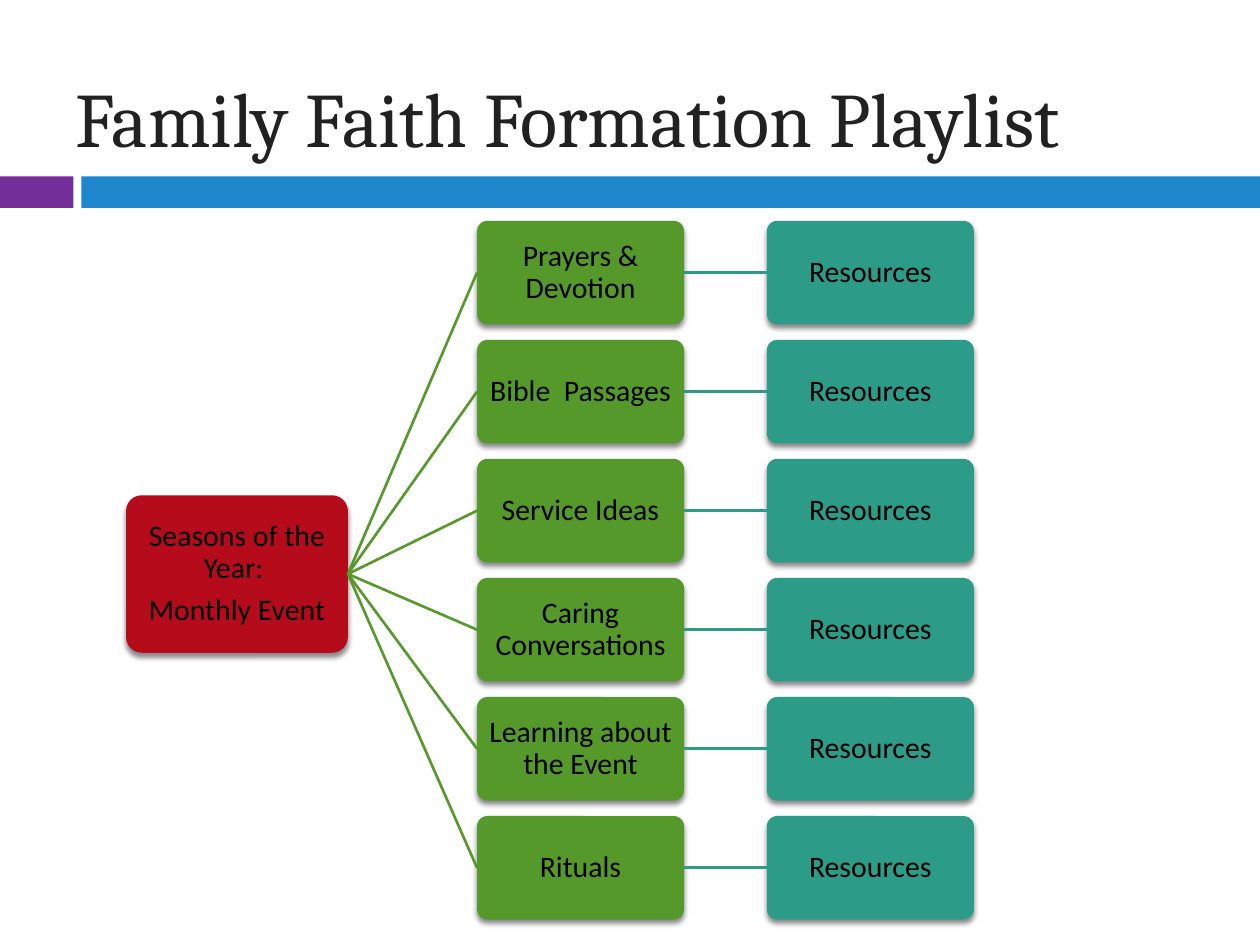
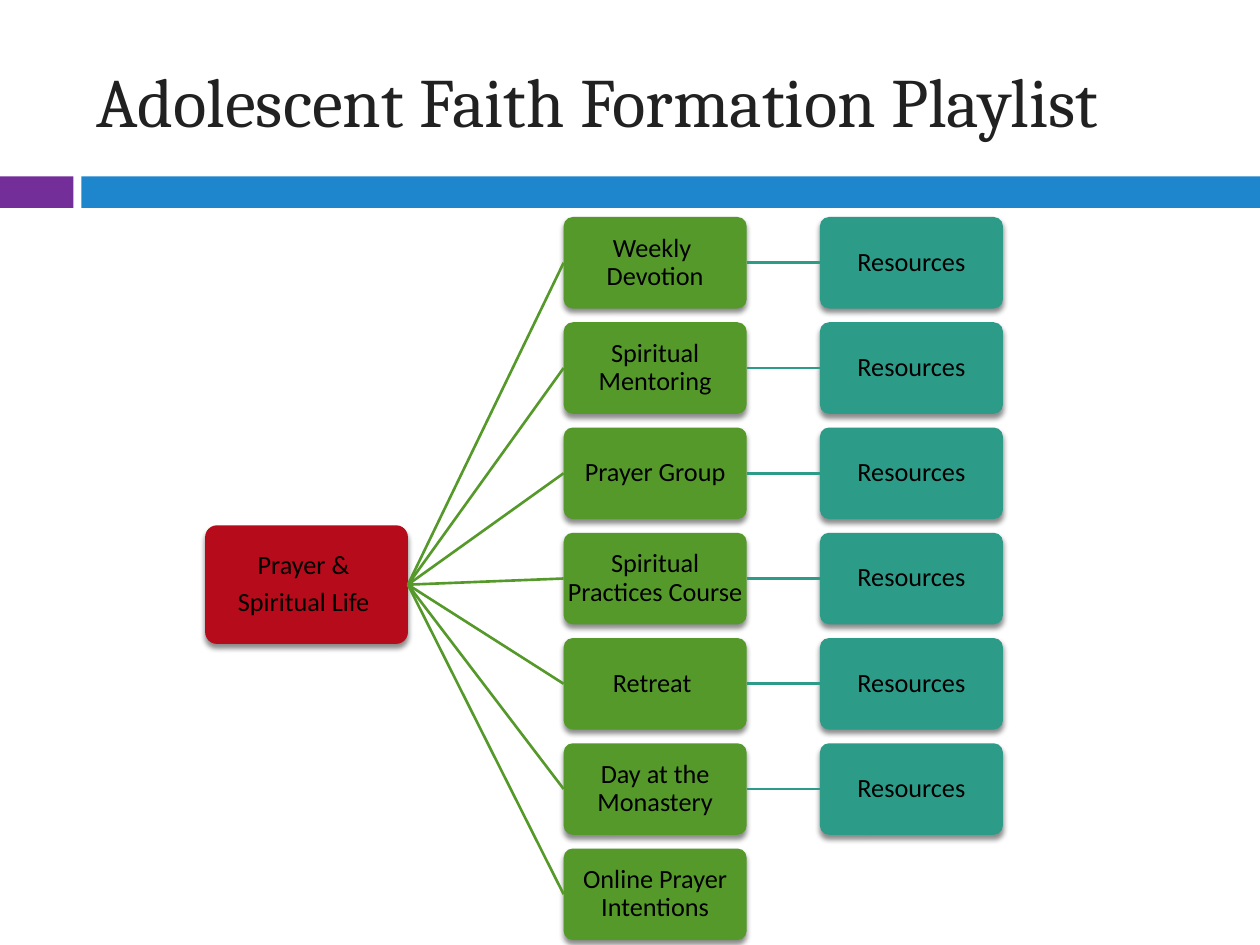
from lxml import etree
from pptx import Presentation
from pptx.dml.color import RGBColor
from pptx.enum.shapes import MSO_CONNECTOR, MSO_SHAPE
from pptx.enum.text import MSO_ANCHOR, PP_ALIGN
from pptx.oxml import parse_xml
from pptx.oxml.ns import nsdecls, qn
from pptx.util import Pt

RECT, ROUND = MSO_SHAPE.RECTANGLE, MSO_SHAPE.ROUNDED_RECTANGLE
LINE = MSO_CONNECTOR.STRAIGHT
MIDDLE, CENTER, LEFT = MSO_ANCHOR.MIDDLE, PP_ALIGN.CENTER, PP_ALIGN.LEFT
LEFT_SIDE, RIGHT_SIDE = 1, 3

RED, GREEN, TEAL = "B50B1B", "55992B", "2C9C89"
PURPLE, BLUE = "732E9A", "1D86CD"
INK, BLACK = "212121", "000000"

BANDS = [(0, 42, PURPLE), (46.5, 673.5, BLUE)]
SHADOW = (
    f'<a:effectLst {nsdecls("a")}>'
    '<a:outerShdw blurRad="38100" dist="30480" dir="5400000" rotWithShape="0">'
    '<a:srgbClr val="000000"><a:alpha val="45000"/></a:srgbClr>'
    '</a:outerShdw></a:effectLst>'
)

MAPS = [
    {
        "title": "Family Faith Formation Playlist",
        "title_box": (36, 21.6, 625, 90), "title_size": 44,
        "root": ["Seasons of the Year: ", "Monthly Event"],
        "root_box": (72, 283, 126.8, 90),
        "topics": ["Prayers & Devotion", "Bible  Passages", "Service Ideas",
                   "Caring Conversations", "Learning about the Event", "Rituals"],
        "left": 272.6, "top": 126.2, "width": 118.3, "size": 17, "linked": 6,
    },
    {
        "title": "Adolescent Faith Formation Playlist",
        "title_box": (48, 18, 642, 78), "title_size": 39.6,
        "root": ["Prayer & ", "Spiritual Life "],
        "root_box": (117.2, 300.2, 115.9, 67.8),
        "topics": ["Weekly  Devotion", "Spiritual Mentoring", "Prayer Group",
                   "Spiritual Practices Course", "Retreat ",
                   "Day at the Monastery", "Online Prayer Intentions"],
        "left": 322.1, "top": 124, "width": 104.6, "size": 15, "linked": 6,
    },
]


def rgb(code):
    return RGBColor.from_string(code)


def write(shape, lines, size, name, color, align, gap=0):
    """Fill a shape with one paragraph per line, centred in height."""
    frame = shape.text_frame
    frame.word_wrap, frame.vertical_anchor = True, MIDDLE
    if gap:
        for side in ("left", "right", "top", "bottom"):
            setattr(frame, f"margin_{side}", Pt(0.72))
    frame.text = "\n".join(lines)
    for para in frame.paragraphs:
        para.alignment = align
        if gap:
            para.line_spacing, para.space_after = 0.9, Pt(gap)
        for key, value in {"size": Pt(size), "name": name}.items():
            setattr(para.font, key, value)
        para.font.color.rgb = rgb(color)


deck = Presentation()
deck.slide_width, deck.slide_height = Pt(720), Pt(540)

for plan in MAPS:
    slide = deck.slides.add_slide(deck.slide_layouts[6])
    shapes = slide.shapes

    for left, width, color in BANDS:
        band = shapes.add_shape(RECT, Pt(left), Pt(100.8), Pt(width), Pt(18))
        band.fill.solid()
        band.fill.fore_color.rgb = rgb(color)
        band.line.fill.background()
        band.shadow.inherit = False

    title = shapes.add_textbox(*map(Pt, plan["title_box"]))
    write(title, [plan["title"]], plan["title_size"], "Cambria", INK, LEFT)

    # Each node is half as high as wide; gaps follow from its size.
    width = plan["width"]
    height = width / 2
    step = height * 1.15
    nodes = [(plan["root"], plan["root_box"], RED, None)]
    for row, topic in enumerate(plan["topics"]):
        left, top = plan["left"], plan["top"] + row * step
        nodes.append(([topic], (left, top, width, height), GREEN, 0))
        if row < plan["linked"]:
            box = (left + width * 1.4, top, width, height)
            nodes.append((["Resources"], box, TEAL, len(nodes) - 1))

    drawn = []
    for lines, box, color, parent in nodes:
        node = shapes.add_shape(ROUND, *map(Pt, box))
        node.adjustments[0] = 0.1
        node.fill.solid()
        node.fill.fore_color.rgb = rgb(color)
        node.line.fill.background()
        node._element.spPr.append(parse_xml(SHADOW))
        write(node, lines, plan["size"], "Calibri", BLACK, CENTER,
              gap=plan["size"] * 0.35)
        drawn.append(node)
        if parent is not None:
            link = shapes.add_connector(LINE, 0, 0, 0, 0)
            link.begin_connect(drawn[parent], RIGHT_SIDE)
            link.end_connect(node, LEFT_SIDE)
            link.line.color.rgb = rgb(color)
            link.line.width = Pt(1.5)
            etree.SubElement(link._element.spPr, qn("a:effectLst"))

deck.save("out.pptx")
